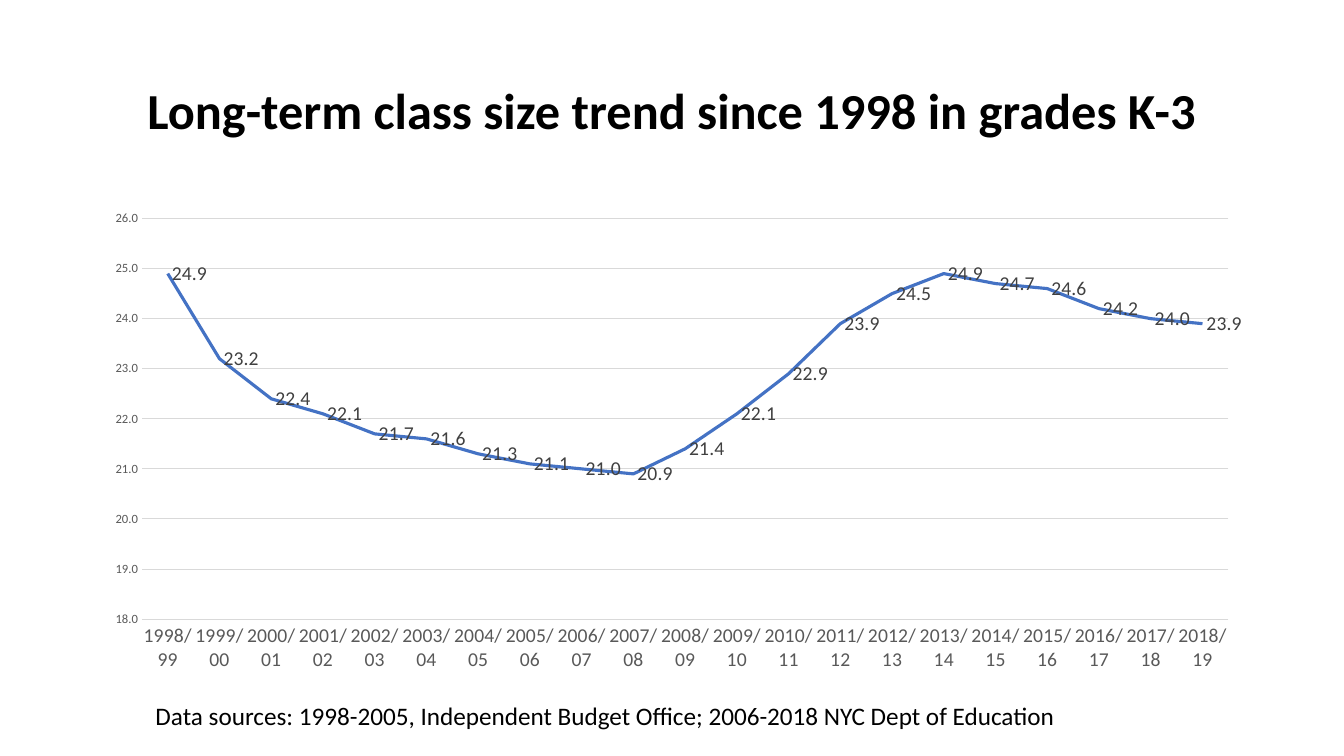
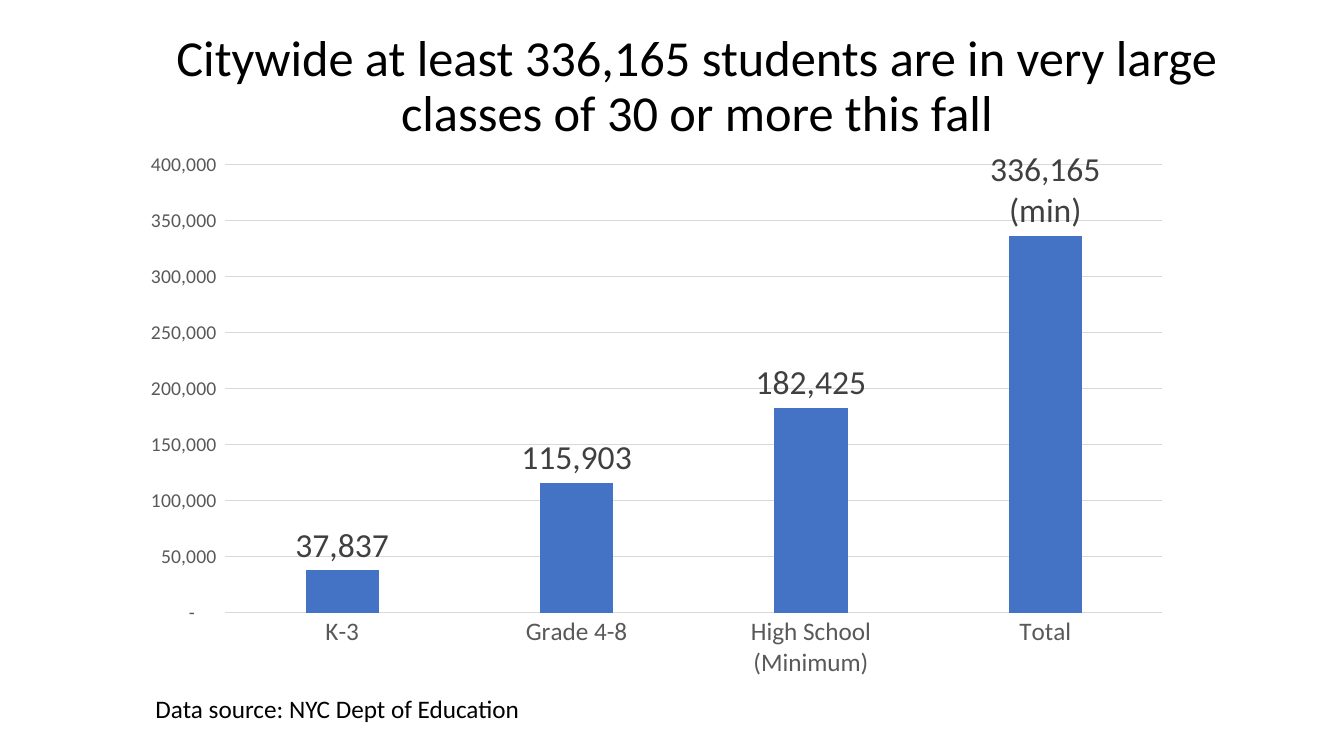
"""Build two slides on class size trends and very large classes."""
from pptx import Presentation as Deck
from pptx.chart.data import CategoryChartData as Data
from pptx.dml.color import RGBColor as RGB
from pptx.enum.chart import XL_CHART_TYPE as Kind, XL_LABEL_POSITION as Spot, XL_TICK_MARK as Tick
from pptx.enum.text import MSO_ANCHOR as Anchor, MSO_AUTO_SIZE as Fit, PP_ALIGN as Align
from pptx.util import Pt

FACE = "Calibri"
HUES = {"text": "000000", "axis": "595959", "label": "404040", "grid": "D9D9D9", "data": "4472C4"}
COUNT = '_(* #,##0_);_(* \\(#,##0\\);_(* "-"??_);_(@_)'
SIZES = [24.9, 23.2, 22.4, 22.1, 21.7, 21.6, 21.3, 21.1, 21, 20.9, 21.4,
         22.1, 22.9, 23.9, 24.5, 24.9, 24.7, 24.6, 24.2, 24, 23.9]
YEARS = [f"{year}/{(year + 1) % 100:02}" for year in range(1998, 1998 + len(SIZES))]
GRADES = {"K-3": 37837, "Grade 4-8": 115903, "High School (Minimum)": 182425, "Total": 336165}


def hue(name):
    return RGB.from_string(HUES[name])


def style(font, size, name="text", bold=False):
    font.name, font.size, font.bold = FACE, Pt(size), bold
    font.color.rgb = hue(name)


def rule(line, name, width):
    line.color.rgb = hue(name)
    line.width = Pt(width)


def add_text(slide, box, text, size, bold=False):
    frame = slide.shapes.add_textbox(*map(Pt, box)).text_frame
    frame.word_wrap = True
    para = frame.paragraphs[0]
    para.text = text
    style(para.font, size, bold=bold)
    return frame


def add_title(slide, left, top, text, bold=False):
    frame = add_text(slide, (left, top, 828, 104), text, 36, bold)
    frame.vertical_anchor = Anchor.MIDDLE
    para = frame.paragraphs[0]
    para.alignment, para.line_spacing = Align.CENTER, 0.9


def add_note(slide, top, text):
    add_text(slide, (104, top, 726, 29), text, 18).auto_size = Fit.SHAPE_TO_FIT_TEXT


def add_chart(slide, kind, box, cats, vals, scale, form, sizes, spot):
    data = Data()
    data.categories = cats
    data.add_series("Series 1", vals)
    chart = slide.shapes.add_chart(kind, *map(Pt, box), data).chart
    chart.has_legend = chart.has_title = False
    style(chart.font, 10)
    x, y = chart.category_axis, chart.value_axis
    for axis, size in zip((x, y), sizes):
        axis.major_tick_mark = axis.minor_tick_mark = Tick.NONE
        style(axis.tick_labels.font, size, "axis")
    rule(x.format.line, "grid", 0.75)
    y.format.line.fill.background()
    rule(y.major_gridlines.format.line, "grid", 0.75)
    y.minimum_scale, y.maximum_scale, y.major_unit = scale
    plot = chart.plots[0]
    plot.vary_by_categories = False
    tags = plot.series[0].data_labels
    tags.show_value, tags.position = True, spot
    style(tags.font, sizes[2], "label")
    for part in (y.tick_labels, tags):
        part.number_format, part.number_format_is_linked = form, False
    return plot


def add_trend(slide):
    plot = add_chart(slide, Kind.LINE, (66, 144, 828, 342.5), YEARS, SIZES,
                     (18, 26, 1), "0.0", (14, 9, 14), Spot.RIGHT)
    line = plot.series[0]
    line.smooth = False
    rule(line.format.line, "data", 2.25)


def add_bars(slide):
    plot = add_chart(slide, Kind.COLUMN_CLUSTERED, (89.5, 101, 756, 391), list(GRADES),
                     list(GRADES.values()), (0, 400000, 50000), COUNT, (18, 14, 24), Spot.OUTSIDE_END)
    plot.gap_width, plot.overlap = 219, -27
    bars = plot.series[0]
    bars.format.fill.solid()
    bars.format.fill.fore_color.rgb = hue("data")
    tag = bars.points[len(GRADES) - 1].data_label
    run = tag.text_frame.paragraphs[0].add_run()
    run.text = "336,165 (min)"
    style(run.font, 24, "label")
    tag.position = Spot.OUTSIDE_END


def main():
    deck = Deck()
    deck.slide_width, deck.slide_height = Pt(960), Pt(540)
    blank = deck.slide_layouts[6]

    slide = deck.slides.add_slide(blank)
    add_title(slide, 66, 29, "Long-term class size trend since 1998 in grades K-3", True)
    add_trend(slide)
    add_note(slide, 497, "Data sources: 1998-2005, Independent Budget Office; 2006-2018 NYC Dept of Education")

    slide = deck.slides.add_slide(blank)
    add_title(slide, 84, 10.5, "Citywide at least 336,165 students are in very large classes of 30 or more this fall")
    add_bars(slide)
    add_note(slide, 492, "Data source: NYC Dept of Education")

    deck.save("out.pptx")


if __name__ == "__main__":
    main()
